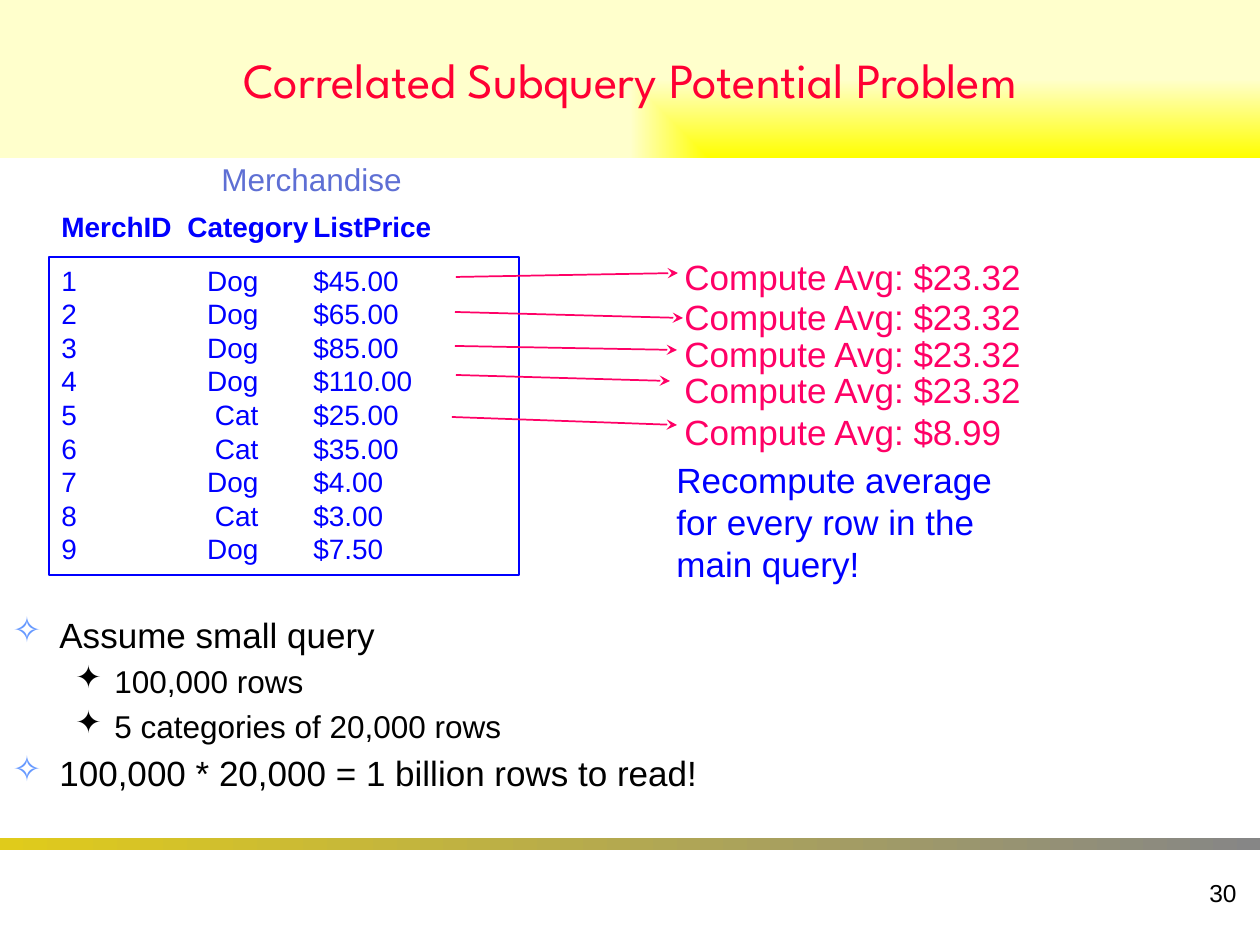
"""Build the slide on the cost of a correlated subquery."""
from dataclasses import dataclass
from typing import Any

from lxml import etree
from pptx import Presentation
from pptx.dml.color import RGBColor
from pptx.enum.shapes import MSO_CONNECTOR, MSO_SHAPE
from pptx.enum.text import MSO_ANCHOR, PP_ALIGN
from pptx.oxml.ns import qn
from pptx.util import Emu, Pt

EMU_PER_PX = 914400 / 126
SLIDE_WIDTH, SLIDE_HEIGHT = 1260, 945
RECTANGLE = MSO_SHAPE.RECTANGLE
STRAIGHT = MSO_CONNECTOR.STRAIGHT
TOP, MIDDLE = MSO_ANCHOR.TOP, MSO_ANCHOR.MIDDLE
LEFT, CENTER, RIGHT = PP_ALIGN.LEFT, PP_ALIGN.CENTER, PP_ALIGN.RIGHT


@dataclass(frozen=True)
class Theme:
    title_font: str = "League Spartan"
    body_font: str = "Arial"
    title: str = "FF0033"
    text: str = "000000"
    table: str = "0000FF"
    caption: str = "5E6FD4"
    accent: str = "FF0066"
    bullet: str = "6699FF"
    banner: tuple[str, str] = ("FFFF00", "FFFFCC")
    footer: tuple[str, str] = ("E0CB1B", "868686")
    title_size: int = 28
    large_size: int = 20
    medium_size: int = 18
    table_size: int = 16
    number_size: int = 14


@dataclass(frozen=True)
class Box:
    left: int
    top: int
    width: int
    height: int


@dataclass(frozen=True)
class Style:
    size: int
    color: str
    font: str = "Arial"
    bold: bool = False


@dataclass(frozen=True)
class Computation:
    amount: str
    top: int
    start: tuple[int, int]
    end: tuple[int, int]


@dataclass(frozen=True)
class Bullet:
    text: str
    level: int = 0


THEME = Theme()

MERCHANDISE = (
    (1, "Dog", "$45.00"),
    (2, "Dog", "$65.00"),
    (3, "Dog", "$85.00"),
    (4, "Dog", "$110.00"),
    (5, "Cat", "$25.00"),
    (6, "Cat", "$35.00"),
    (7, "Dog", "$4.00"),
    (8, "Cat", "$3.00"),
    (9, "Dog", "$7.50"),
)

COMPUTATIONS = (
    Computation("$23.32", 249, (456, 277), (678, 273)),
    Computation("$23.32", 289, (455, 312), (683, 318)),
    Computation("$23.32", 326, (455, 346), (677, 350)),
    Computation("$23.32", 362, (456, 375), (670, 381)),
    Computation("$8.99", 404, (452, 417), (677, 425)),
)

BULLETS = (
    Bullet("Assume small query"),
    Bullet("100,000 rows", 1),
    Bullet("5 categories of 20,000 rows", 1),
    Bullet("100,000 * 20,000 = 1 billion rows to read!"),
)


def px(value: int) -> Emu:
    """Turn pixels into EMU."""
    return Emu(round(value * EMU_PER_PX))


def place(shape: Any, box: Box) -> None:
    """Move and size a shape."""
    shape.left, shape.top = px(box.left), px(box.top)
    shape.width, shape.height = px(box.width), px(box.height)


def format_paragraph(paragraph: Any, style: Style, align: Any = LEFT) -> None:
    """Apply a text style to every run of a paragraph."""
    paragraph.alignment = align
    for run in paragraph.runs:
        run.font.name = style.font
        run.font.size = Pt(style.size)
        run.font.bold = style.bold
        run.font.color.rgb = RGBColor.from_string(style.color)


def write(shape: Any, text: str, style: Style, align: Any = LEFT,
          anchor: Any = TOP, wrap: bool = True) -> None:
    """Fill a shape with text in one style."""
    frame = shape.text_frame
    frame.word_wrap = wrap
    frame.vertical_anchor = anchor
    frame.text = text
    for paragraph in frame.paragraphs:
        format_paragraph(paragraph, style, align)


def add_text(slide: Any, box: Box, text: str, style: Style, **options: Any) -> Any:
    """Add a text box."""
    shape = slide.shapes.add_textbox(*map(px, (box.left, box.top, box.width, box.height)))
    write(shape, text, style, **options)
    return shape


def add_rectangle(slide: Any, box: Box) -> Any:
    """Add a rectangle without a shadow."""
    shape = slide.shapes.add_shape(RECTANGLE, px(box.left), px(box.top),
                                   px(box.width), px(box.height))
    shape.shadow.inherit = False
    return shape


def fill_gradient(shape: Any, colors: tuple[str, str]) -> None:
    """Fill a shape with a horizontal two-colour gradient."""
    shape.fill.gradient()
    shape.fill.gradient_angle = 0
    for stop, position, color in zip(shape.fill.gradient_stops, (0, 1), colors):
        stop.position = position
        stop.color.rgb = RGBColor.from_string(color)


def add_title(slide: Any, text: str) -> None:
    """Format the title placeholder as a banner shaded from its corner."""
    title = slide.shapes.title
    place(title, Box(0, 0, SLIDE_WIDTH, 158))
    fill_gradient(title, THEME.banner)
    gradient = title.element.spPr.find(qn("a:gradFill"))
    gradient.remove(gradient.find(qn("a:lin")))
    corner = etree.SubElement(gradient, qn("a:path"), path="rect")
    etree.SubElement(corner, qn("a:fillToRect"), l="100000", t="100000")
    write(title, text, Style(THEME.title_size, THEME.title, THEME.title_font),
          align=CENTER, anchor=MIDDLE)


def add_footer(slide: Any, number: str) -> None:
    """Add the footer bar and the slide number."""
    bar = add_rectangle(slide, Box(0, 838, SLIDE_WIDTH, 12))
    fill_gradient(bar, THEME.footer)
    bar.line.fill.background()
    add_text(slide, Box(987, 861, 262, 63), number,
             Style(THEME.number_size, THEME.text), align=RIGHT, anchor=MIDDLE)


def add_merchandise(slide: Any) -> None:
    """Add the caption, the headings and the tabbed rows."""
    add_text(slide, Box(209, 154, 208, 50), "Merchandise",
             Style(THEME.medium_size, THEME.caption), wrap=False)
    add_text(slide, Box(49, 203, 399, 47), "MerchID\tCategory\tListPrice",
             Style(THEME.table_size, THEME.table, bold=True), wrap=False)
    frame = add_rectangle(slide, Box(49, 257, 470, 318))
    frame.fill.background()
    frame.line.color.rgb = RGBColor.from_string(THEME.table)
    frame.line.width = Pt(1)
    rows = "\n".join("\t".join(map(str, row)) for row in MERCHANDISE)
    write(frame, rows, Style(THEME.table_size, THEME.table))
    for paragraph in frame.text_frame.paragraphs:
        tabs = etree.SubElement(paragraph._p.get_or_add_pPr(), qn("a:tabLst"))
        etree.SubElement(tabs, qn("a:tab"), pos=str(px(197)), algn="dec")


def add_computation(slide: Any, computation: Computation) -> None:
    """Add one computed average and the arrow that leads to it."""
    add_text(slide, Box(672, computation.top, 364, 55), f"Compute Avg: {computation.amount}",
             Style(THEME.large_size, THEME.accent), wrap=False)
    arrow = slide.shapes.add_connector(
        STRAIGHT, *map(px, computation.start + computation.end))
    arrow.line.color.rgb = RGBColor.from_string(THEME.accent)
    arrow.line.width = Pt(1)
    properties = arrow.element.spPr
    etree.SubElement(properties.find(qn("a:ln")), qn("a:tailEnd"), type="stealth")
    etree.SubElement(properties, qn("a:effectLst"))


def add_bullets(slide: Any) -> None:
    """Add the two-level list of conclusions."""
    shape = add_text(slide, Box(0, 607, 1240, 224), "\n".join(item.text for item in BULLETS),
                     Style(THEME.large_size, THEME.text))
    for index, (item, paragraph) in enumerate(zip(BULLETS, shape.text_frame.paragraphs)):
        paragraph.level = item.level
        paragraph.space_before = Pt(4 if index else 0)
        margin, indent, mark, color, size = (
            (102, -39, "✦", THEME.text, THEME.medium_size) if item.level
            else (47, -47, "✧", THEME.bullet, THEME.large_size))
        format_paragraph(paragraph, Style(size, THEME.text))
        properties = paragraph._p.get_or_add_pPr()
        properties.set("marL", str(px(margin)))
        properties.set("indent", str(px(indent)))
        bullet_color = etree.SubElement(properties, qn("a:buClr"))
        etree.SubElement(bullet_color, qn("a:srgbClr"), val=color)
        etree.SubElement(properties, qn("a:buChar"), char=mark)


def main() -> None:
    """Build and save the presentation."""
    presentation = Presentation()
    presentation.slide_width, presentation.slide_height = px(SLIDE_WIDTH), px(SLIDE_HEIGHT)
    slide = presentation.slides.add_slide(presentation.slide_layouts[5])
    add_title(slide, "Correlated Subquery Potential Problem")
    add_footer(slide, "30")
    add_bullets(slide)
    add_merchandise(slide)
    for computation in COMPUTATIONS:
        add_computation(slide, computation)
    add_text(slide, Box(664, 452, 352, 140),
             "Recompute average for every row in the main query!",
             Style(THEME.large_size, THEME.table))
    presentation.save("out.pptx")


if __name__ == "__main__":
    main()
